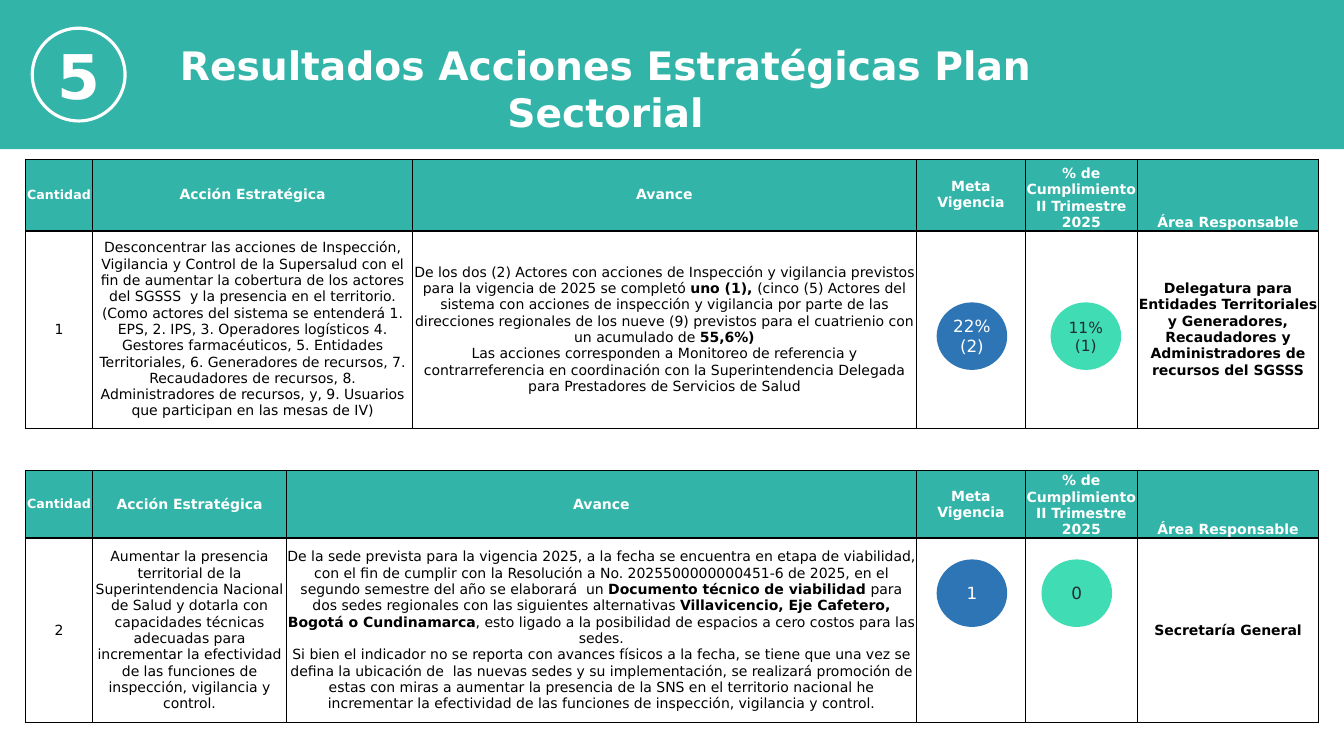
from lxml.etree import SubElement
from pptx import Presentation
from pptx.dml.color import RGBColor
from pptx.enum.shapes import MSO_SHAPE
from pptx.enum.text import MSO_ANCHOR, PP_ALIGN
from pptx.oxml.ns import qn
from pptx.util import Inches, Pt

# Content: *text* between asterisks is bold
SECTION = "5"
TITLE = "Resultados Acciones Estratégicas Plan Sectorial"
HEADINGS = ["Cantidad", "Acción Estratégica", "Avance", "Meta\vVigencia",
            "% de Cumplimiento II Trimestre 2025", "Área Responsable"]
ACTIONS = [
    {
        "top": 1.58, "rows": [0.71, 1.96], "columns": [0.67, 3.17, 5, 1.08, 1.11, 1.8],
        "cells": [
            ["1"],
            ["Desconcentrar las acciones de Inspección, Vigilancia y Control de la Supersalud "
             "con el fin de aumentar la cobertura de los actores del SGSSS  y la presencia en "
             "el territorio.",
             "(Como actores del sistema se entenderá 1. EPS, 2. IPS, 3. Operadores logísticos "
             "4. Gestores farmacéuticos, 5. Entidades Territoriales, 6. Generadores de recursos, "
             "7. Recaudadores de recursos, 8. Administradores de recursos, y, 9. Usuarios que "
             "participan en las mesas de IV)"],
            ["De los dos (2) Actores con acciones de Inspección y vigilancia previstos para la "
             "vigencia de 2025 se completó *uno (1), *(cinco (5) Actores del sistema con acciones "
             "de inspección y vigilancia por parte de las direcciones regionales de los nueve (9) "
             "previstos para el cuatrienio con un acumulado de *55,6%)*",
             "Las acciones corresponden a Monitoreo de referencia y contrarreferencia en "
             "coordinación con la Superintendencia Delegada para Prestadores de Servicios de Salud"],
            [], [],
            ["*Delegatura para Entidades Territoriales y Generadores, Recaudadores y "
             "Administradores de recursos del SGSSS*"],
        ],
        "goal": ["22%", "(2)"], "progress": ["11%", "(1)"], "progress_size": 11,
        "progress_inset": 0.25, "circle_drop": 0.71,
    },
    {
        "top": 4.67, "rows": [0.67, 1.83], "columns": [0.67, 1.92, 6.25, 1.08, 1.11, 1.8],
        "cells": [
            ["2"],
            ["Aumentar la presencia territorial de la Superintendencia Nacional de Salud y "
             "dotarla con capacidades técnicas adecuadas para incrementar la efectividad de las "
             "funciones de inspección, vigilancia y control."],
            ["De la sede prevista para la vigencia 2025, a la fecha se encuentra en etapa de "
             "viabilidad, con el fin de cumplir con la Resolución a No. 2025500000000451-6 de "
             "2025, en el segundo semestre del año se elaborará  un *Documento técnico de "
             "viabilidad *para dos sedes regionales con las siguientes alternativas "
             "*Villavicencio, Eje Cafetero, Bogotá o Cundinamarca*, esto ligado a la posibilidad "
             "de espacios a cero costos para las sedes.",
             "Si bien el indicador no se reporta con avances físicos a la fecha, se tiene que una "
             "vez se defina la ubicación de  las nuevas sedes y su implementación, se realizará "
             "promoción de estas con miras a aumentar la presencia de la SNS en el territorio "
             "nacional he incrementar la efectividad de las funciones de inspección, vigilancia "
             "y control."],
            [], [],
            ["*Secretaría General*"],
        ],
        "goal": ["1"], "progress": ["0"], "progress_size": 12,
        "progress_inset": 0.16, "circle_drop": 0.21,
    },
]

# Style and grid
COLORS = {"teal": "32B4A8", "white": "FFFFFF", "black": "000000",
          "blue": "2E75B6", "mint": "40DCB3", "ink": "222A35"}
FONT = "DejaVu Sans"
SLIDE_W, SLIDE_H = 13.33, 7.5
TABLE_LEFT = 0.25
GOAL, PROGRESS = 3, 4
GOAL_INSET = 0.2
CIRCLE_W, CIRCLE_H = 0.7, 0.67


def rgb(name):
    return RGBColor.from_string(COLORS[name])


def write(frame, paragraphs, size, color, bold=False):
    """Fill a text frame with centred paragraphs."""
    frame.word_wrap = True
    for index, text in enumerate(paragraphs):
        paragraph = frame.paragraphs[0] if index == 0 else frame.add_paragraph()
        paragraph.alignment = PP_ALIGN.CENTER
        for part, words in enumerate(text.split("*")):
            if not words:
                continue
            if "\v" in words:
                paragraph.text = words
            else:
                paragraph.add_run().text = words
            for run in paragraph.runs[-1:] if "\v" not in words else paragraph.runs:
                run.font.name, run.font.size = FONT, Pt(size)
                run.font.bold = bold or part % 2 == 1
                run.font.color.rgb = rgb(color)


def draw_borders(cell, bottom_width):
    properties = cell._tc.get_or_add_tcPr()
    for side, width in (("L", 1), ("R", 1), ("T", 1), ("B", bottom_width)):
        line = SubElement(properties, qn(f"a:ln{side}"), w=str(Pt(width)))
        fill = SubElement(line, qn("a:solidFill"))
        SubElement(fill, qn("a:srgbClr"), val=COLORS["black"])


def fill_cell(cell, paragraphs, size, color, heading, anchor):
    cell.margin_left = cell.margin_right = cell.margin_top = cell.margin_bottom = 0
    cell.vertical_anchor = anchor
    draw_borders(cell, 2 if heading else 1)
    if heading:
        cell.fill.solid()
        cell.fill.fore_color.rgb = rgb("teal")
    else:
        cell.fill.background()
    write(cell.text_frame, paragraphs, size, color, heading)


def add_figure(kind, box, fill=None, outline=None):
    figure = slide.shapes.add_shape(kind, *map(Inches, box))
    figure.shadow.inherit = False
    if fill:
        figure.fill.solid()
        figure.fill.fore_color.rgb = rgb(fill)
    else:
        figure.fill.background()
    if outline:
        figure.line.color.rgb, figure.line.width = rgb(outline), Pt(2.25)
    else:
        figure.line.fill.background()
    frame = figure.text_frame
    frame.margin_left = frame.margin_right = frame.margin_top = frame.margin_bottom = 0
    frame.vertical_anchor = MSO_ANCHOR.MIDDLE
    return frame


presentation = Presentation()
presentation.slide_width, presentation.slide_height = Inches(SLIDE_W), Inches(SLIDE_H)
slide = presentation.slides.add_slide(presentation.slide_layouts[6])

# Banner with section number and title
add_figure(MSO_SHAPE.RECTANGLE, (0, 0, SLIDE_W, 1.48), "teal")
title = slide.shapes.add_textbox(*map(Inches, (1.24, 0.36, 9.53, 1.04)))
write(title.text_frame, [TITLE], 28, "white", True)
badge = add_figure(MSO_SHAPE.OVAL, (0.32, 0.28, 0.92, 0.92), outline="white")
write(badge, [SECTION], 44, "white", True)

# One table for each strategic action, with its two circles
for action in ACTIONS:
    columns, rows, top = action["columns"], action["rows"], action["top"]
    table = slide.shapes.add_table(
        2, len(columns), Inches(TABLE_LEFT), Inches(top),
        Inches(sum(columns)), Inches(sum(rows))).table
    table.first_row = table.horz_banding = False
    for row, height in zip(table.rows, rows):
        row.height = Inches(height)
    for index, width in enumerate(columns):
        table.columns[index].width = Inches(width)
        anchor = MSO_ANCHOR.BOTTOM if index >= PROGRESS else MSO_ANCHOR.MIDDLE
        fill_cell(table.cell(0, index), [HEADINGS[index]], 9 if index == 0 else 10,
                  "white", True, anchor)
        fill_cell(table.cell(1, index), action["cells"][index], 10,
                  "black", False, MSO_ANCHOR.MIDDLE)

    circle_top = top + rows[0] + action["circle_drop"]
    for key, column, inset, size, fill, color in (
            ("goal", GOAL, GOAL_INSET, 12, "blue", "white"),
            ("progress", PROGRESS, action["progress_inset"], action["progress_size"],
             "mint", "ink")):
        left = TABLE_LEFT + sum(columns[:column]) + inset
        circle = add_figure(MSO_SHAPE.OVAL, (left, circle_top, CIRCLE_W, CIRCLE_H), fill)
        write(circle, action[key], size, color)

presentation.save("out.pptx")
